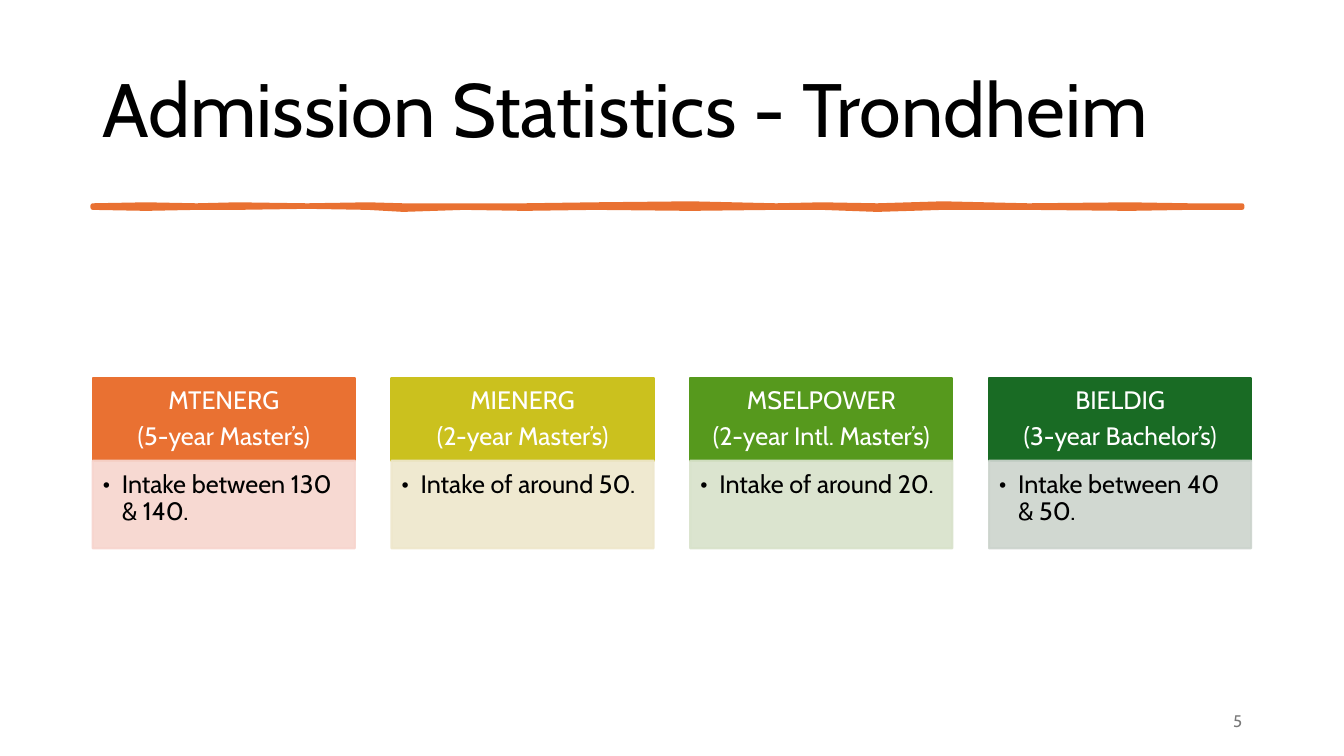
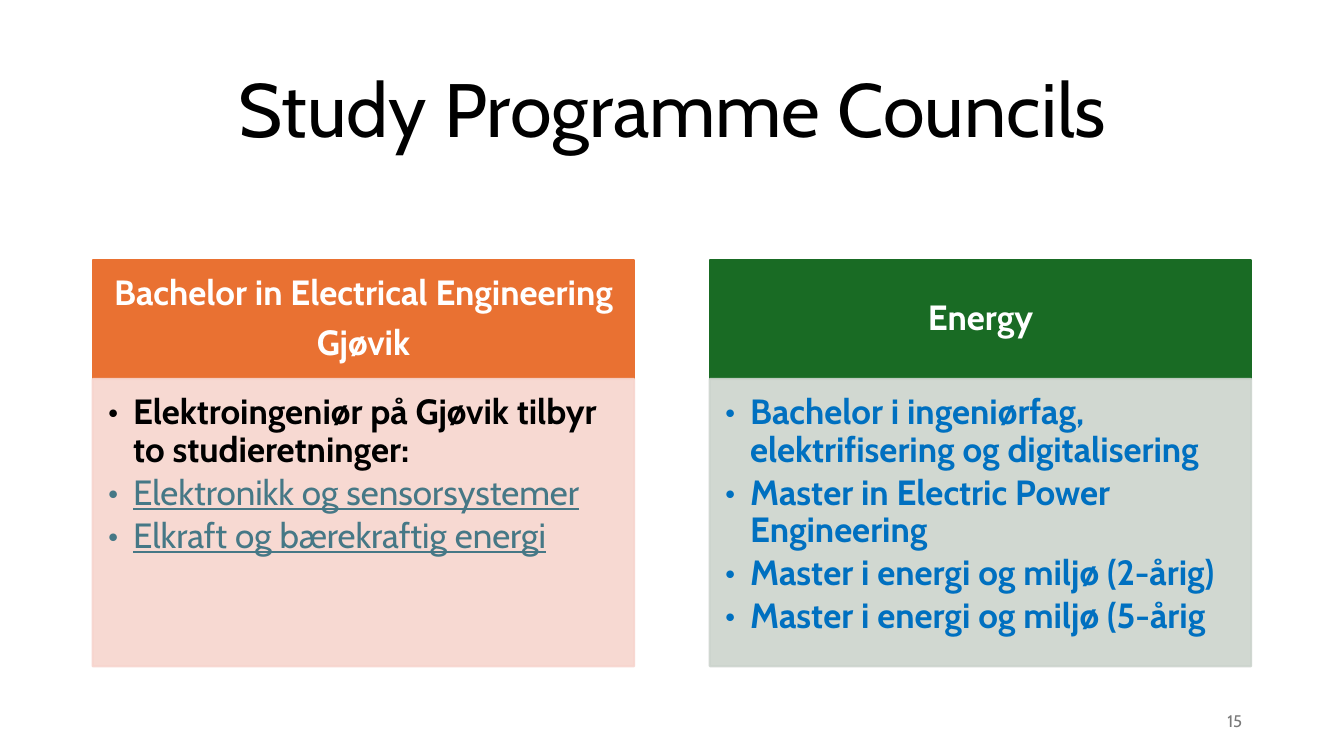
from lxml.etree import SubElement
from pptx import Presentation
from pptx.dml.color import RGBColor
from pptx.enum.shapes import MSO_SHAPE
from pptx.enum.text import MSO_ANCHOR, MSO_AUTO_SIZE, PP_ALIGN
from pptx.oxml.ns import qn
from pptx.util import Inches, Pt

# Shared look
FONT = "Cabin"
BLACK, WHITE, GREY, LINK, BLUE = "000000", "FFFFFF", "797979", "467886", "0070C0"
ORANGE, OLIVE, GREEN, DARK = [
    ("E97132", "F7D5CE"), ("CBC11E", "EEE7CB"),
    ("56991D", "D8E2CA"), ("196B24", "CCD4CD")]
LEFT, SPAN = 0.92, 11.49
CENTER, RIGHT = PP_ALIGN.CENTER, PP_ALIGN.RIGHT

# Text formats
PLAIN = {"color": BLACK}
STRONG = {"color": BLACK, "bold": True}
LINKED = {"color": LINK, "underline": True}
COUNCIL = {"color": BLUE, "bold": True}

# Content: each card is (colours, header lines, [(bullet, format)])
SLIDES = [
    {"title": "Admission Statistics - Trondheim", "align": PP_ALIGN.LEFT,
     "number": "5", "rule": True,
     "grid": {"top": 3.75, "width": 2.6, "head": 0.82, "body": 0.87},
     "text": {"size": 18, "bold": False, "indent": 0.19,
              "head_ins": (0.14, 0.08, 0.14, 0.08),
              "body_ins": (0.1, 0.11, 0.14, 0.16)},
     "cards": [
         (ORANGE, ["MTENERG", "(5-year Master’s)"],
          [("Intake between 130 & 140.", PLAIN)]),
         (OLIVE, ["MIENERG", "(2-year Master’s)"],
          [("Intake of around 50.", PLAIN)]),
         (GREEN, ["MSELPOWER", "(2-year Intl. Master’s)"],
          [("Intake of around 20.", PLAIN)]),
         (DARK, ["BIELDIG", "(3-year Bachelor’s)"],
          [("Intake between 40 & 50.", PLAIN)])]},
    {"title": "Study Programme Councils", "align": CENTER,
     "number": "15", "rule": False,
     "grid": {"top": 2.58, "width": 5.37, "head": 1.18, "body": 2.85},
     "text": {"size": 25, "bold": True, "indent": 0.25,
              "head_ins": (0.19, 0.11, 0.19, 0.11),
              "body_ins": (0.15, 0.15, 0.19, 0.22)},
     "cards": [
         (ORANGE, ["Bachelor in Electrical Engineering", "Gjøvik"],
          [("Elektroingeniør på Gjøvik tilbyr to studieretninger:", STRONG),
           ("Elektronikk og sensorsystemer", LINKED),
           ("Elkraft og bærekraftig energi", LINKED)]),
         (DARK, ["Energy"],
          [("Bachelor i ingeniørfag, elektrifisering og digitalisering", COUNCIL),
           ("Master in Electric Power Engineering", COUNCIL),
           ("Master i energi og miljø (2-årig)", COUNCIL),
           ("Master i energi og miljø (5-årig", COUNCIL)])]},
]

# Hand-drawn rule: (x, top edge, bottom edge)
BRUSH = [
    (0.92, 2.04, 2.06), (1.45, 2.03, 2.07), (1.95, 2.04, 2.06),
    (2.35, 2.03, 2.06), (3.05, 2.04, 2.05), (3.65, 2.03, 2.06),
    (4.0, 2.04, 2.08), (4.6, 2.04, 2.06), (5.2, 2.04, 2.07),
    (5.9, 2.03, 2.06), (6.85, 2.02, 2.07), (7.7, 2.04, 2.06),
    (8.15, 2.03, 2.06), (8.7, 2.04, 2.08), (9.35, 2.02, 2.06),
    (10.2, 2.04, 2.06), (11.2, 2.03, 2.07), (11.8, 2.04, 2.06),
    (12.32, 2.04, 2.06)]


def rgb(color):
    return RGBColor.from_string(color)


def write(p, text, size, color, align=None, spacing=0.9, after=0, **font):
    """Fill one paragraph with one formatted run."""
    for key, value in {"alignment": align, "line_spacing": spacing,
                       "space_after": Pt(after), "space_before": Pt(0)}.items():
        setattr(p, key, value)
    r = p.add_run()
    r.text = text
    for key, value in {"name": FONT, "size": Pt(size), **font}.items():
        setattr(r.font, key, value)
    r.font.color.rgb = rgb(color)


def frame(sp, insets=(0.1, 0.05, 0.1, 0.05), anchor=MSO_ANCHOR.MIDDLE):
    tf = sp.text_frame
    for key, value in {"word_wrap": True, "auto_size": MSO_AUTO_SIZE.NONE,
                       "vertical_anchor": anchor}.items():
        setattr(tf, key, value)
    for side, inset in zip(("left", "top", "right", "bottom"), insets):
        setattr(tf, f"margin_{side}", Inches(inset))
    return tf


def paragraphs(tf, items):
    """Pair each item with a paragraph of the frame."""
    for i, item in enumerate(items):
        yield (tf.add_paragraph() if i else tf.paragraphs[0]), item


def paint(sp, color, line_width, opacity=100):
    sp.shadow.inherit = False
    sp.fill.solid()
    sp.fill.fore_color.rgb = rgb(color)
    sp.line.color.rgb = rgb(color)
    sp.line.width = Pt(line_width)
    if opacity < 100:
        for clr in sp.element.spPr.iter(qn("a:srgbClr")):
            SubElement(clr, qn("a:alpha"), val=str(opacity * 1000))


def box(s, x, y, w, h, color, opacity=100):
    sp = s.shapes.add_shape(MSO_SHAPE.RECTANGLE, *map(Inches, (x, y, w, h)))
    paint(sp, color, 1.5, opacity)
    return sp


def bullet(p, indent):
    pPr = p._p.get_or_add_pPr()
    pPr.set("marL", str(Inches(indent)))
    pPr.set("indent", str(-Inches(indent)))
    SubElement(pPr, qn("a:buFont"), typeface=FONT)
    SubElement(pPr, qn("a:buChar"), char="•")


def add_card(s, x, grid, style, card):
    (head_color, body_color), heads, bullets = card
    size, y, w = style["size"], grid["top"], grid["width"]
    head = box(s, x, y, w, grid["head"], head_color)
    for p, text in paragraphs(frame(head, style["head_ins"]), heads):
        write(p, text, size, WHITE, CENTER, after=0.35 * size, bold=style["bold"])
    body = box(s, x, y + grid["head"], w, grid["body"], body_color, 90)
    tf = frame(body, style["body_ins"], MSO_ANCHOR.TOP)
    for p, (text, form) in paragraphs(tf, bullets):
        bullet(p, style["indent"])
        write(p, text, size, align=PP_ALIGN.LEFT, after=0.15 * size, **form)


def add_rule(s):
    """Draw the brush line along its top edge and back along the bottom."""
    outline = [(x, top) for x, top, _ in BRUSH]
    outline += [(x, bottom) for x, _, bottom in reversed(BRUSH)]
    points = [(Inches(x), Inches(y)) for x, y in outline]
    pen = s.shapes.build_freeform(*points[0])
    pen.add_line_segments(points[1:], close=True)
    sp = pen.convert_to_shape()
    paint(sp, ORANGE[0], 3.25)
    SubElement(sp.line._get_or_add_ln(), qn("a:round"))


def add_slide(prs, data):
    s = prs.slides.add_slide(prs.slide_layouts[5])
    # Title
    title = s.shapes.title
    for key, value in zip(("left", "top", "width", "height"), (LEFT, 0.4, 11.5, 1.45)):
        setattr(title, key, Inches(value))
    write(frame(title).paragraphs[0], data["title"], 54, BLACK, data["align"])
    if data["rule"]:
        add_rule(s)
    # Cards spread evenly over the span
    grid, cards = data["grid"], data["cards"]
    pitch = (SPAN - grid["width"]) / (len(cards) - 1)
    for i, card in enumerate(cards):
        add_card(s, LEFT + i * pitch, grid, data["text"], card)
    # Slide number
    number = s.shapes.add_textbox(*map(Inches, (9.42, 6.95, 3, 0.4)))
    write(frame(number).paragraphs[0], data["number"], 12, GREY, RIGHT, spacing=1)


def main():
    prs = Presentation()
    prs.slide_width, prs.slide_height = Inches(13.33), Inches(7.5)
    for data in SLIDES:
        add_slide(prs, data)
    prs.save("out.pptx")


if __name__ == "__main__":
    main()
